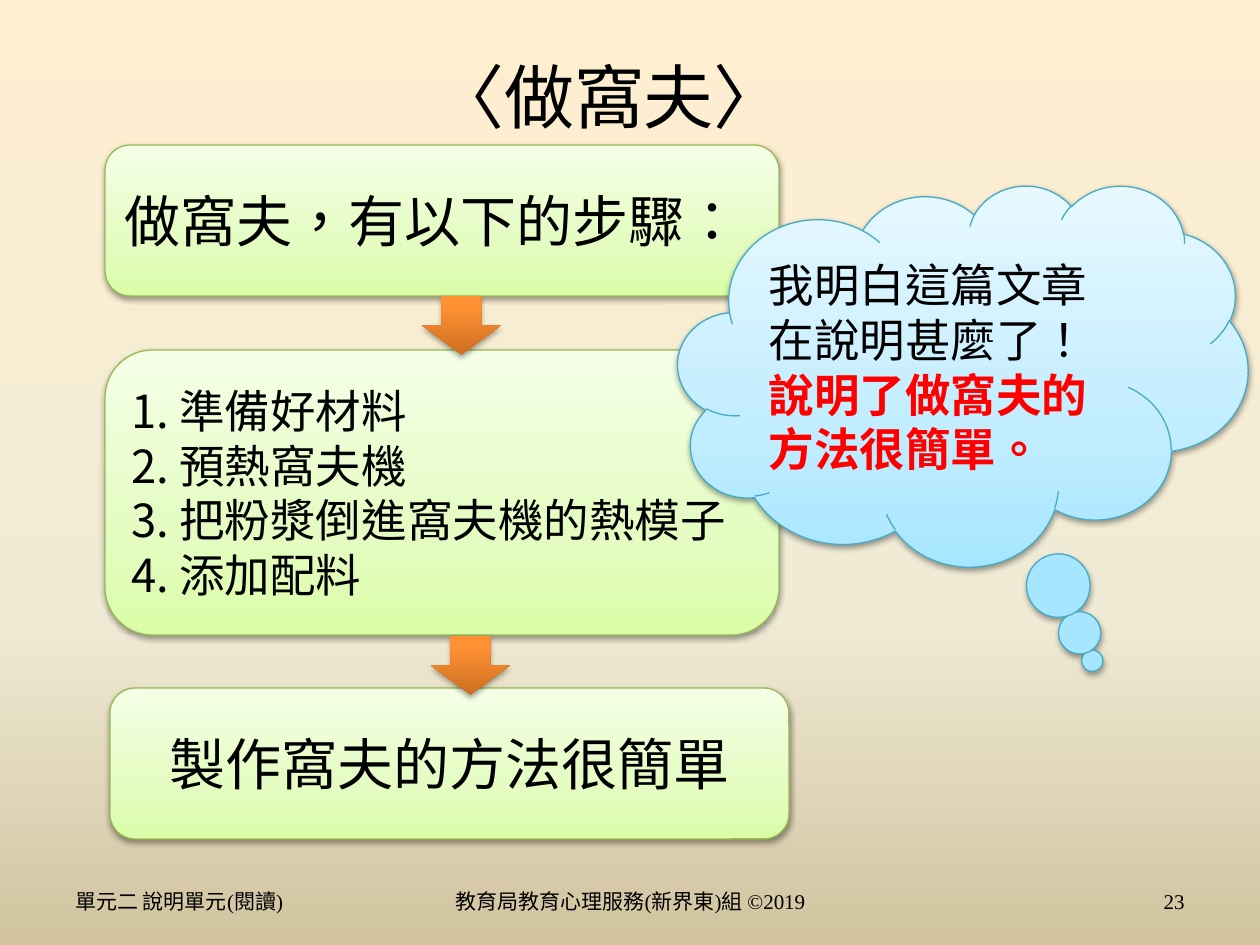
"""Build the waffle-making reading slide: a three-step flow with a thought cloud."""
from dataclasses import dataclass

from lxml import etree
from pptx import Presentation
from pptx.dml.color import RGBColor
from pptx.enum.shapes import MSO_SHAPE
from pptx.enum.text import MSO_ANCHOR, PP_ALIGN
from pptx.oxml.ns import qn
from pptx.util import Emu, Pt

LEFT, CENTER, RIGHT = PP_ALIGN.LEFT, PP_ALIGN.CENTER, PP_ALIGN.RIGHT
MIDDLE = MSO_ANCHOR.MIDDLE
ROUNDED, CLOUD, ARROW = MSO_SHAPE.ROUNDED_RECTANGLE, MSO_SHAPE.CLOUD_CALLOUT, MSO_SHAPE.DOWN_ARROW
TITLE_ONLY = 5
UPWARD, DOWNWARD = 270, 90


@dataclass(frozen=True)
class Theme:
    """Colours, fonts and type sizes of the slide."""
    font: str = "Noto Sans CJK SC"
    footer_font: str = "Times New Roman"
    text: str = "000000"
    accent: str = "FF0000"
    title_size: int = 40
    large: int = 32
    medium: int = 26
    small: int = 12
    background: tuple = ((0, "FFEFD1"), (65, "F0EBD5"), (100, "D1C39F"))
    green: tuple = ((0, "DAFDA7"), (35, "E4FCC2"), (100, "F5FFE7"))
    green_line: str = "98B955"
    blue: tuple = ((0, "A7E6FF"), (35, "C1EDFF"), (100, "E7F8FF"))
    blue_line: str = "46AAC5"
    orange: tuple = ((0, "CC6E20"), (80, "FF9034"), (100, "FF9136"))


THEME = Theme()
TITLE = "〈做窩夫〉"
TITLE_BOX = (84, 16, 1050, 158)
STEPS = ["準備好材料", "預熱窩夫機", "把粉漿倒進窩夫機的熱模子", "添加配料"]
BOXES = [
    ((105, 145, 674, 151), ["做窩夫，有以下的步驟："], THEME.large, LEFT),
    ((105, 350, 674, 285), [f"{number}. {step}" for number, step in enumerate(STEPS, 1)],
     THEME.medium, LEFT),
    ((110, 688, 679, 151), ["製作窩夫的方法很簡單"], THEME.large, CENTER),
]
CLOUD_BOX = (678, 185, 570, 381)
CLOUD_TAIL = (0.227, 0.749)
THOUGHT = "我明白這篇文章在說明甚麼了！"
CONCLUSION = "說明了做窩夫的方法很簡單。"
ARROWS = [(431, 636, 79, 59), (422, 296, 79, 59)]
FOOTER_TOP, FOOTER_HEIGHT = 876, 50
FOOTERS = [
    (63, 294, "單元二 說明單元(閱讀)", LEFT),
    (431, 399, "教育局教育心理服務(新界東)組 ©2019", CENTER),
    (903, 294, "23", RIGHT),
]


def px(value):
    return Emu(round(value * 914400 / 126))


def place(box):
    return [px(value) for value in box]


def set_gradient(fill, owner, stops, angle):
    fill.gradient()
    gradient = next(owner.iter(qn("a:gradFill")))
    for child in list(gradient):
        gradient.remove(child)
    stop_list = etree.SubElement(gradient, qn("a:gsLst"))
    for position, color in stops:
        stop = etree.SubElement(stop_list, qn("a:gs"), pos=str(position * 1000))
        etree.SubElement(stop, qn("a:srgbClr"), val=color)
    etree.SubElement(gradient, qn("a:lin"), ang=str(angle * 60000), scaled="0")


def add_shadow(shape, opacity, distance):
    shape.shadow.inherit = False
    effects = shape._element.spPr.find(qn("a:effectLst"))
    shadow = etree.SubElement(effects, qn("a:outerShdw"), blurRad="40000", dist=str(distance),
                              dir="5400000", rotWithShape="0")
    color = etree.SubElement(shadow, qn("a:srgbClr"), val="000000")
    etree.SubElement(color, qn("a:alpha"), val=str(opacity * 1000))


def write(shape, lines, size, align, font=THEME.font):
    frame = shape.text_frame
    frame.word_wrap = True
    frame.vertical_anchor = MIDDLE
    for index, (text, color, bold) in enumerate(lines):
        paragraph = frame.add_paragraph() if index else frame.paragraphs[0]
        paragraph.alignment = align
        run = paragraph.add_run()
        run.text = text
        run.font.name, run.font.size, run.font.bold = font, Pt(size), bold
        run.font.color.rgb = RGBColor.from_string(color)
        properties = run._r.get_or_add_rPr()
        properties.set("lang", "zh-TW")
        etree.SubElement(properties, qn("a:ea"), typeface=THEME.font)


def plain(texts):
    return [(text, THEME.text, False) for text in texts]


def add_panel(slide, kind, box, stops, line=None, opacity=38, distance=20000):
    shape = slide.shapes.add_shape(kind, *place(box))
    set_gradient(shape.fill, shape._element, stops, UPWARD)
    if line:
        shape.line.color.rgb = RGBColor.from_string(line)
        shape.line.width = Pt(0.75)
    else:
        shape.line.fill.background()
    add_shadow(shape, opacity, distance)
    return shape


def main():
    presentation = Presentation()
    presentation.slide_width, presentation.slide_height = px(1260), px(945)
    slide = presentation.slides.add_slide(presentation.slide_layouts[TITLE_ONLY])
    set_gradient(slide.background.fill, slide._element, THEME.background, DOWNWARD)

    title = slide.shapes.title
    title.left, title.top, title.width, title.height = place(TITLE_BOX)
    write(title, plain([TITLE]), THEME.title_size, CENTER)

    for left, width, text, align in FOOTERS:
        footer = slide.shapes.add_textbox(*place((left, FOOTER_TOP, width, FOOTER_HEIGHT)))
        write(footer, plain([text]), THEME.small, align, THEME.footer_font)

    for box, texts, size, align in BOXES:
        panel = add_panel(slide, ROUNDED, box, THEME.green, THEME.green_line)
        write(panel, plain(texts), size, align)

    cloud = add_panel(slide, CLOUD, CLOUD_BOX, THEME.blue, THEME.blue_line)
    for index, value in enumerate(CLOUD_TAIL):
        cloud.adjustments[index] = value
    write(cloud, plain([THOUGHT]) + [(CONCLUSION, THEME.accent, True)], THEME.medium, LEFT)

    for box in ARROWS:
        add_panel(slide, ARROW, box, THEME.orange, opacity=35, distance=23000)

    presentation.save("out.pptx")


if __name__ == "__main__":
    main()
